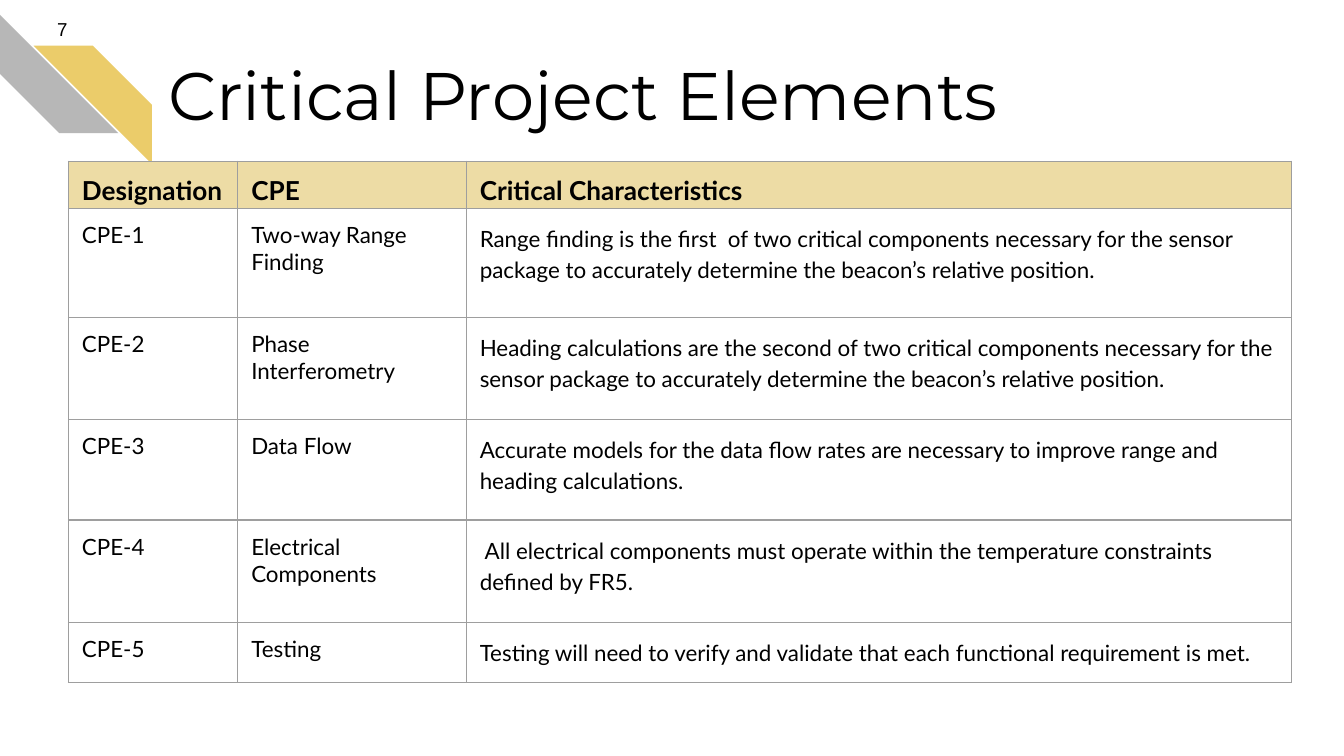
from lxml.etree import SubElement
from pptx import Presentation
from pptx.dml.color import RGBColor
from pptx.enum.shapes import MSO_SHAPE
from pptx.enum.text import MSO_ANCHOR, MSO_AUTO_SIZE, PP_ALIGN
from pptx.oxml.ns import qn
from pptx.util import Inches, Pt

COLORS = {
    "text": "000000",
    "gray": "B7B7B7",
    "gold": "EBCC6A",
    "header": "EDDCA5",
    "border": "9E9E9E",
}
TITLE = "Critical Project Elements"
PAGE = "7"
STRIPES = [(0, 0.11, 270, "gray"), (0.25, 0.34, 90, "gold")]
STRIPE_SIZE = 0.88
HEADINGS = ("Designation", "CPE", "Critical Characteristics")
ELEMENTS = [
    ("CPE-1", "Two-way Range Finding",
     "Range finding is the first  of two critical components necessary for the sensor package "
     "to accurately determine the beacon’s relative position."),
    ("CPE-2", "Phase Interferometry",
     "Heading calculations are the second of two critical components necessary for the sensor "
     "package to accurately determine the beacon’s relative position."),
    ("CPE-3", "Data Flow",
     "Accurate models for the data flow rates are necessary to improve range and heading "
     "calculations."),
    ("CPE-4", "Electrical Components",
     " All electrical components must operate within the temperature constraints defined by FR5."),
    ("CPE-5", "Testing",
     "Testing will need to verify and validate that each functional requirement is met."),
]
SLIDE_WIDTH = 10
COLUMN_WIDTHS = (1.26, 1.7, 6.14)
ROW_HEIGHTS = (0.35, 0.81, 0.76, 0.75, 0.76, 0.45)


def color(name):
    return RGBColor.from_string(COLORS[name])


def write(frame, text, size=12, font="Lato", bold=False, align=PP_ALIGN.LEFT,
          spacing=None, after=None):
    paragraph = frame.paragraphs[0]
    paragraph.alignment = align
    paragraph.line_spacing = spacing
    paragraph.space_after = after
    run = paragraph.add_run()
    run.text = text
    run.font.size = Pt(size)
    run.font.name = font
    run.font.bold = bold
    run.font.color.rgb = color("text")


def set_frame(frame, anchor):
    frame.word_wrap = True
    frame.auto_size = MSO_AUTO_SIZE.NONE
    frame.vertical_anchor = anchor
    frame.margin_left = frame.margin_right = Inches(0.1)
    frame.margin_top = frame.margin_bottom = Inches(0.1)


def add_borders(cell):
    properties = cell._tc.get_or_add_tcPr()
    for side in ("a:lnL", "a:lnR", "a:lnT", "a:lnB"):
        border = SubElement(properties, qn(side), w=str(Pt(0.75)))
        fill = SubElement(border, qn("a:solidFill"))
        SubElement(fill, qn("a:srgbClr"), val=COLORS["border"])


def add_stripe(slide, left, top, rotation, fill):
    stripe = slide.shapes.add_shape(
        MSO_SHAPE.DIAGONAL_STRIPE, Inches(left), Inches(top),
        Inches(STRIPE_SIZE), Inches(STRIPE_SIZE))
    stripe.adjustments[0] = 0.5
    stripe.rotation = rotation
    stripe.shadow.inherit = False
    stripe.fill.solid()
    stripe.fill.fore_color.rgb = color(fill)
    stripe.line.fill.background()


def add_elements_table(slide):
    rows = [HEADINGS, *ELEMENTS]
    table = slide.shapes.add_table(
        len(rows), len(HEADINGS), Inches(0.51), Inches(1.2),
        Inches(sum(COLUMN_WIDTHS)), Inches(sum(ROW_HEIGHTS))).table
    table.horz_banding = False
    for column, width in zip(table.columns, COLUMN_WIDTHS):
        column.width = Inches(width)
    for r, (texts, height) in enumerate(zip(rows, ROW_HEIGHTS)):
        table.rows[r].height = Inches(height)
        for c, text in enumerate(texts):
            cell = table.cell(r, c)
            cell.margin_left = cell.margin_right = cell.margin_top = Inches(0.1)
            cell.margin_bottom = 0
            add_borders(cell)
            if r == 0:
                cell.fill.solid()
                cell.fill.fore_color.rgb = color("header")
                write(cell.text_frame, text, size=14, bold=True)
            else:
                cell.fill.background()
                write(cell.text_frame, text,
                      spacing=1.15 if c == 2 else None,
                      after=Pt(10) if (r, c) == (1, 2) else None)


def main():
    deck = Presentation()
    deck.slide_width = Inches(SLIDE_WIDTH)
    deck.slide_height = Inches(SLIDE_WIDTH * 9 / 16)
    slide = deck.slides.add_slide(deck.slide_layouts[5])

    for stripe in STRIPES:
        add_stripe(slide, *stripe)

    title = slide.shapes.title
    title.left, title.top = Inches(1.15), Inches(0.3)
    title.width, title.height = Inches(7.7), Inches(1)
    set_frame(title.text_frame, MSO_ANCHOR.TOP)
    write(title.text_frame, TITLE, size=36, font="Montserrat")

    page_number = slide.shapes.add_textbox(0, 0, Inches(0.6), Inches(0.43))
    set_frame(page_number.text_frame, MSO_ANCHOR.MIDDLE)
    write(page_number.text_frame, PAGE, size=10, font="Arial", align=PP_ALIGN.RIGHT)

    add_elements_table(slide)
    deck.save("out.pptx")


if __name__ == "__main__":
    main()
